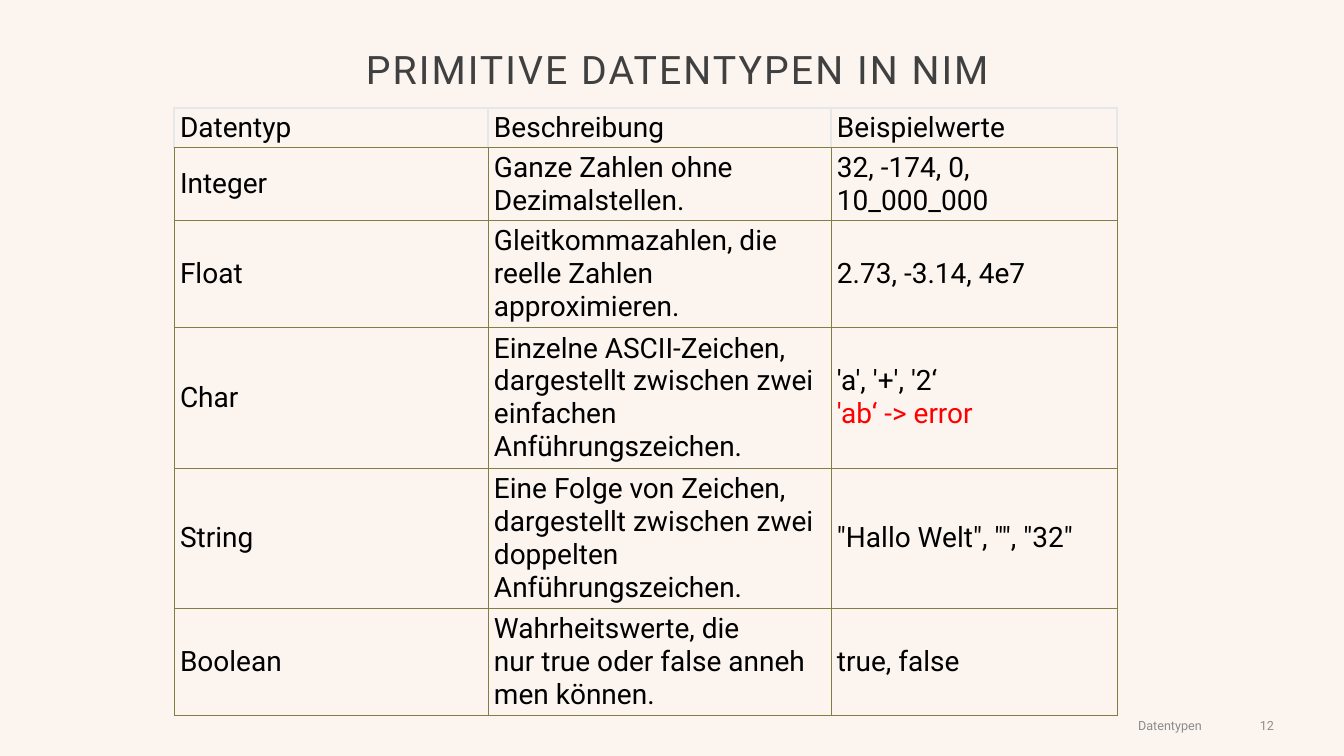
from lxml import etree
from pptx import Presentation
from pptx import util as u
from pptx.dml import color
from pptx.enum import text
from pptx.oxml import ns

SCALE = 12192000 / 1344
FONT = "Roboto"
BLACK, RED, GREY, OLIVE, PALE = "000000", "FF0000", "8C8C8C", "807E42", "E5E7EB"
MIDDLE, BOTTOM = text.MSO_ANCHOR.MIDDLE, text.MSO_ANCHOR.BOTTOM
LEFT, CENTER, RIGHT = text.PP_ALIGN.LEFT, text.PP_ALIGN.CENTER, text.PP_ALIGN.RIGHT
LINE_HEIGHT, PAD_X, PAD_Y = 33, 6, 3
COLUMNS = [314, 343, 286]
LINE_COUNTS = [1, 2, 3, 4, 4, 3]
BOOLEAN_WORDS = chr(160).join(["nur", "true", "oder", "false", "annehmen"])
ROWS = [
    ["Datentyp", "Beschreibung", "Beispielwerte"],
    ["Integer", "Ganze Zahlen ohne Dezimalstellen.", "32, -174, 0, 10_000_000"],
    ["Float", "Gleitkommazahlen, die reelle Zahlen approximieren.", "2.73, -3.14, 4e7"],
    ["Char", "Einzelne ASCII-Zeichen, dargestellt zwischen zwei einfachen Anführungszeichen.",
     "'a', '+', '2‘\n'ab‘ -> error"],
    ["String", "Eine Folge von Zeichen, dargestellt zwischen zwei doppelten Anführungszeichen.",
     '"Hallo Welt", "", "32"'],
    ["Boolean", f"Wahrheitswerte, die {BOOLEAN_WORDS} können.", "true, false"],
]


def px(n):
    """Turn pixels into EMU."""
    return u.Emu(round(n * SCALE))


def rgb(value):
    """Turn a hex string into a colour."""
    return color.RGBColor.from_string(value)


def set_all(obj, formats):
    """Set each attribute named in a dict."""
    for name, value in formats.items():
        setattr(obj, name, value)


def add_run(p, content, size, hex_color):
    """Add formatted text to a paragraph and return its run."""
    r = p.add_run()
    r.text = content
    set_all(r.font, {"name": FONT, "size": u.Pt(size), "bold": False})
    r.font.color.rgb = rgb(hex_color)
    return r


def add_label(slide, box, content, size, hex_color, align):
    """Add a one-line text box and return its paragraph."""
    tf = slide.shapes.add_textbox(*map(px, box)).text_frame
    set_all(tf, {"word_wrap": True, "vertical_anchor": MIDDLE})
    p = tf.paragraphs[0]
    p.alignment = align
    add_run(p, content, size, hex_color)
    return p


def add_title(slide, content):
    """Add the letter-spaced slide title."""
    p = add_label(slide, (356, -1, 928, 146), content, 28, "404040", LEFT)
    p.line_spacing = 0.9
    p.runs[0].font._element.set("spc", "150")


def set_border(cell, side, hex_color, width):
    """Draw one border of a table cell."""
    props = cell._tc.get_or_add_tcPr()
    ln = etree.SubElement(props, ns.qn(f"a:ln{side}"), w=str(u.Pt(width)))
    fill = etree.SubElement(ln, ns.qn("a:solidFill"))
    etree.SubElement(fill, ns.qn("a:srgbClr"), val=hex_color)


def fill_cell(cell, content, is_header):
    """Write and format one table cell."""
    set_all(cell, {"margin_left": px(PAD_X), "margin_right": px(PAD_X),
                   "margin_top": px(PAD_Y), "margin_bottom": px(PAD_Y),
                   "vertical_anchor": BOTTOM if is_header else MIDDLE})
    for side in "LRTB":
        pale = is_header and side != "B"
        set_border(cell, side, PALE if pale else OLIVE, 1 if pale else 0.75)
    cell.fill.background()
    tf = cell.text_frame
    for i, line in enumerate(content.split("\n")):
        p = tf.add_paragraph() if i else tf.paragraphs[0]
        add_run(p, line, 20, RED if "error" in line else BLACK)


def add_type_table(slide, left, top):
    """Add the table of data types."""
    heights = [n * LINE_HEIGHT + 2 * PAD_Y for n in LINE_COUNTS]
    box = map(px, (left, top, sum(COLUMNS), sum(heights)))
    table = slide.shapes.add_table(len(ROWS), len(COLUMNS), *box).table
    set_all(table, {"first_row": False, "horz_banding": False})
    for column, width in zip(table.columns, COLUMNS):
        column.width = px(width)
    for i, (row, height) in enumerate(zip(table.rows, heights)):
        row.height = px(height)
        for cell, content in zip(row.cells, ROWS[i]):
            fill_cell(cell, content, i == 0)


def main():
    """Build and save the slide."""
    prs = Presentation()
    set_all(prs, {"slide_width": px(1344), "slide_height": px(756)})
    slide = prs.slides.add_slide(prs.slide_layouts[6])
    slide.background.fill.solid()
    slide.background.fill.fore_color.rgb = rgb("FBF4EF")
    add_title(slide, "PRIMITIVE DATENTYPEN IN NIM")
    add_label(slide, (943, 706, 454, 40), "Datentypen", 9, GREY, CENTER)
    add_label(slide, (982, 706, 302, 40), "12", 9, GREY, RIGHT)
    add_type_table(slide, 174, 108)
    prs.save("out.pptx")


if __name__ == "__main__":
    main()
